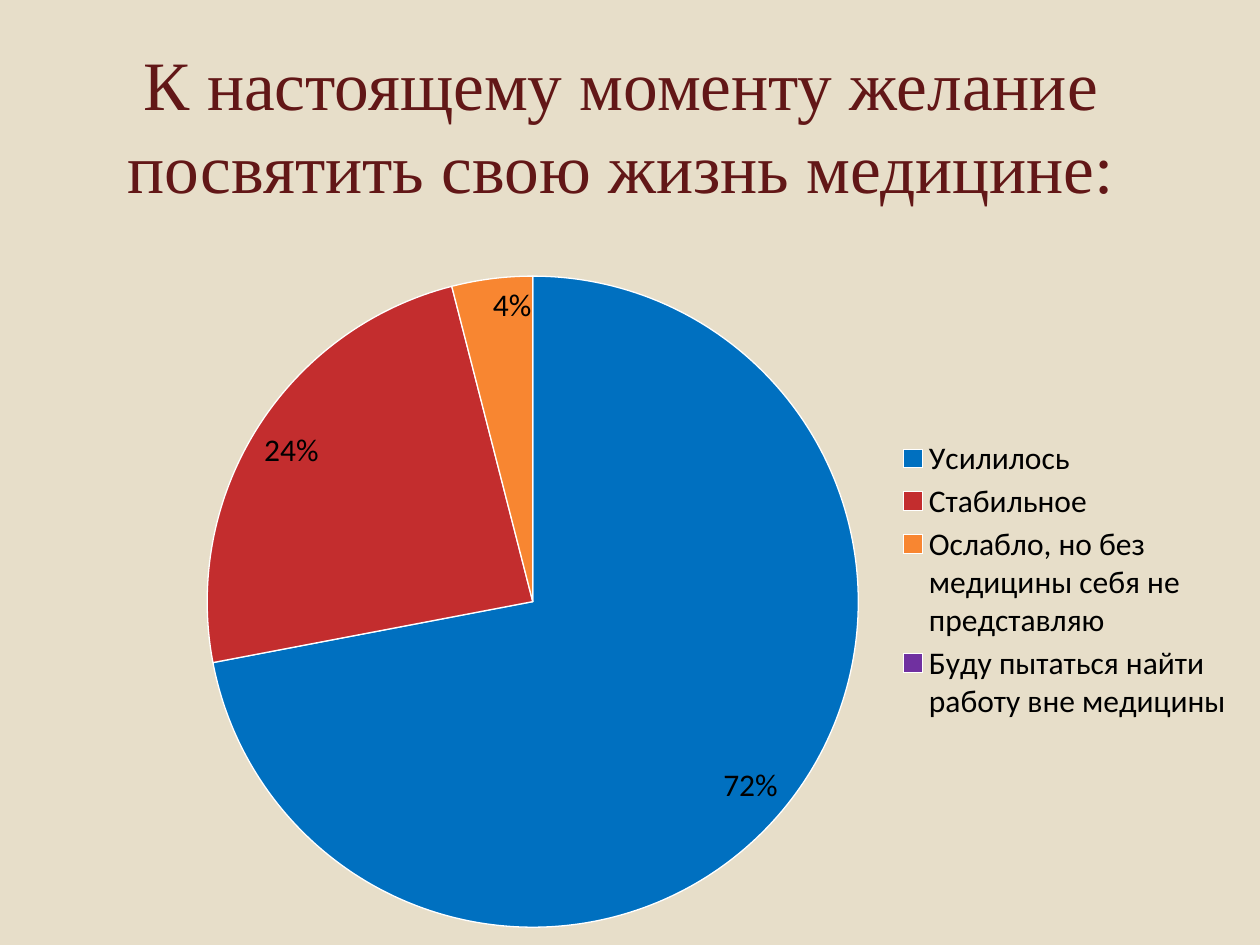
import pptx
import pptx.chart.data
import pptx.dml.color
import pptx.enum.chart
import pptx.enum.text
import pptx.oxml
import pptx.oxml.ns
import pptx.util

PX = 914400 // 126  # EMU per px
COLORS = {
    "background": "E7DEC9",
    "title": "621717",
    "text": "000000",
    "border": "FFFFFF",
}
ANSWERS = [
    ("Усилилось", 72, "0070C0"),
    ("Стабильное", 24, "C32D2E"),
    ("Ослабло, но без медицины себя не представляю", 4, "F88631"),
    ("Буду пытаться найти работу вне медицины", 0, "7030A0"),
]
CHART_BOX = (174, 214, 1071, 731)
PIE_BOX = (207, 276, 651, 651)
LEGEND_BOX = (895, 435, 340, 290)


def px(n):
    return pptx.util.Emu(n * PX)


def rgb(value):
    return pptx.dml.color.RGBColor.from_string(value)


def chart_xml(body):
    return pptx.oxml.parse_xml(body.replace(">", f" {pptx.oxml.ns.nsdecls('c')}>", 1))


def make_layout(box, target=""):
    """Manual layout for a box given in slide px."""
    left, top, width, height = CHART_BOX
    x, y, w, h = box
    parts = {"x": (x - left) / width, "y": (y - top) / height,
             "w": w / width, "h": h / height}
    modes = '<c:xMode val="edge"/><c:yMode val="edge"/>'
    values = "".join(f'<c:{k} val="{v:.3f}"/>' for k, v in parts.items())
    return chart_xml(f"<c:layout><c:manualLayout>{target}{modes}{values}"
                     "</c:manualLayout></c:layout>")


def add_title(s, text):
    sp = s.shapes.title
    sp.left, sp.top, sp.width, sp.height = map(px, (54, 45, 1134, 158))
    tf = sp.text_frame
    tf.text = text
    tf.word_wrap = True
    tf.vertical_anchor = pptx.enum.text.MSO_ANCHOR.MIDDLE
    p = tf.paragraphs[0]
    p.alignment = pptx.enum.text.PP_ALIGN.CENTER
    font = p.runs[0].font
    font.name, font.size = "Times New Roman", pptx.util.Pt(39.6)
    font.color.rgb = rgb(COLORS["title"])


def add_labels(plot):
    plot.has_data_labels = True
    labels = plot.data_labels
    labels.show_percentage = True
    labels.show_value = False
    labels.number_format = "0%"
    labels.number_format_is_linked = False
    labels.position = pptx.enum.chart.XL_LABEL_POSITION.INSIDE_END
    # Answers nobody chose carry no label
    for i, (_, value, _) in enumerate(ANSWERS):
        if value == 0:
            labels._element.insert(0, chart_xml(
                f'<c:dLbl><c:idx val="{i}"/><c:delete val="1"/></c:dLbl>'))


def add_pie(s):
    data = pptx.chart.data.CategoryChartData()
    data.categories = [name for name, _, _ in ANSWERS]
    data.add_series("Series 1", [value for _, value, _ in ANSWERS])
    chart = s.shapes.add_chart(pptx.enum.chart.XL_CHART_TYPE.PIE,
                               *map(px, CHART_BOX), data).chart
    chart.has_title = False
    chart.font.name, chart.font.size = "Calibri", pptx.util.Pt(18)
    chart.font.color.rgb = rgb(COLORS["text"])

    # Slices
    plot = chart.plots[0]
    plot.vary_by_categories = True
    for i, (_, _, color) in enumerate(ANSWERS):
        fmt = plot.series[0].points[i].format
        fmt.fill.solid()
        fmt.fill.fore_color.rgb = rgb(color)
        fmt.line.color.rgb = rgb(COLORS["border"])
        fmt.line.width = pptx.util.Pt(0.75)
    add_labels(plot)

    # Legend and plot positions
    chart.has_legend = True
    legend = chart.legend
    legend.position = pptx.enum.chart.XL_LEGEND_POSITION.RIGHT
    legend.include_in_layout = False
    qn = pptx.oxml.ns.qn
    area = chart._chartSpace.find(".//" + qn("c:plotArea"))
    for parent in (area, legend._element):
        for old in parent.findall(qn("c:layout")):
            parent.remove(old)
    area.insert(0, make_layout(PIE_BOX, '<c:layoutTarget val="inner"/>'))
    legend._element.find(qn("c:legendPos")).addnext(make_layout(LEGEND_BOX))


def main():
    prs = pptx.Presentation()
    prs.slide_width, prs.slide_height = px(1260), px(945)
    s = prs.slides.add_slide(prs.slide_layouts[5])
    s.background.fill.solid()
    s.background.fill.fore_color.rgb = rgb(COLORS["background"])
    add_pie(s)
    add_title(s, "К настоящему моменту желание посвятить свою жизнь медицине:")
    prs.save("out.pptx")


if __name__ == "__main__":
    main()
